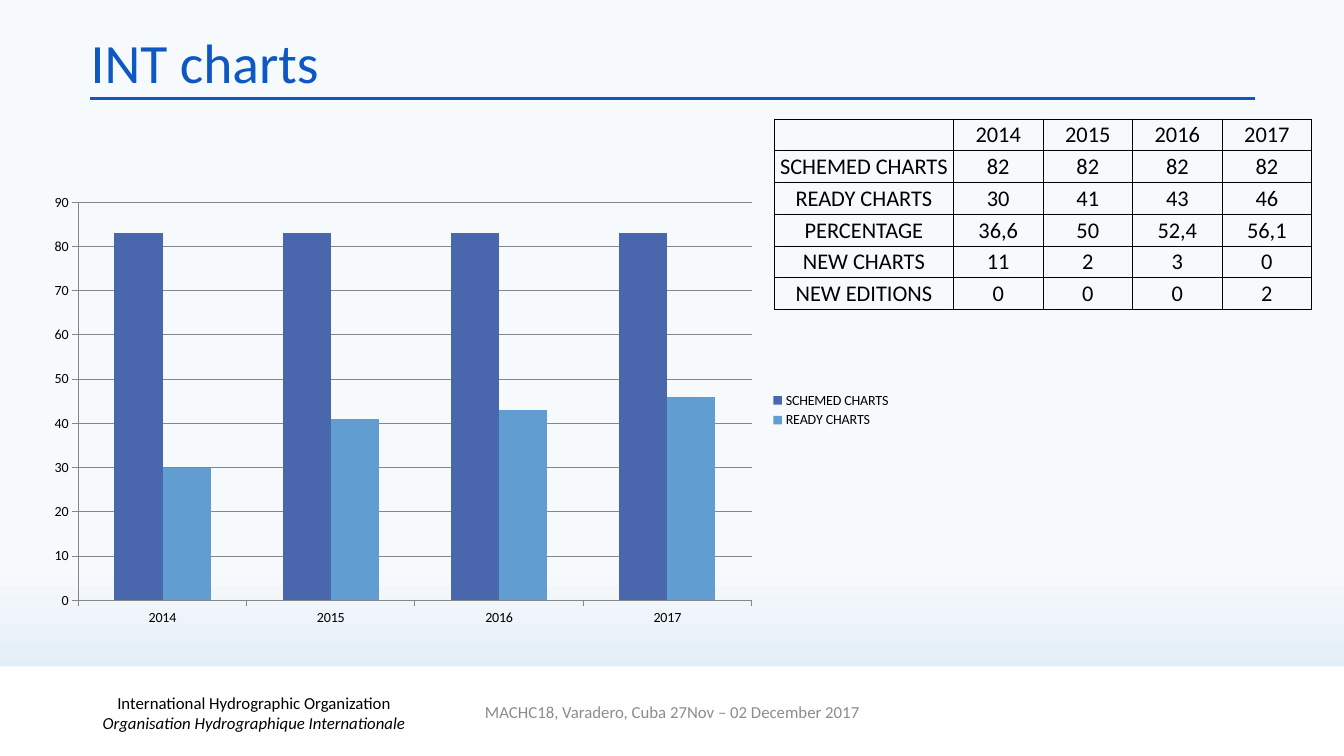
from lxml.etree import SubElement
from pptx import Presentation
from pptx.chart.data import CategoryChartData
from pptx.dml.color import RGBColor
from pptx.enum.chart import XL_CHART_TYPE, XL_LEGEND_POSITION, XL_TICK_MARK
from pptx.enum.shapes import MSO_CONNECTOR, MSO_SHAPE
from pptx.enum.text import MSO_ANCHOR, MSO_AUTO_SIZE, PP_ALIGN
from pptx.oxml.ns import qn
from pptx.util import Inches, Pt

FONT = "Calibri"
BLACK = RGBColor(0x00, 0x00, 0x00)
WHITE = RGBColor(0xFF, 0xFF, 0xFF)
BLUE = RGBColor(0x0E, 0x58, 0xC4)
GREY = RGBColor(0x8C, 0x8C, 0x8C)
GRID = RGBColor(0x86, 0x86, 0x86)
SKY_TOP = RGBColor(0xF7, 0xFA, 0xFD)
SKY_BOTTOM = RGBColor(0xD0, 0xE2, 0xF1)
SCHEMED = RGBColor(0x4A, 0x66, 0xAC)
READY = RGBColor(0x62, 0x9D, 0xD1)

YEARS = ["2014", "2015", "2016", "2017"]
SERIES = [
    ("SCHEMED CHARTS", [83, 83, 83, 83], SCHEMED),
    ("READY CHARTS", [30, 41, 43, 46], READY),
]
TABLE_ROWS = [
    [""] + YEARS,
    ["SCHEMED CHARTS", "82", "82", "82", "82"],
    ["READY CHARTS", "30", "41", "43", "46"],
    ["PERCENTAGE", "36,6", "50", "52,4", "56,1"],
    ["NEW CHARTS", "11", "2", "3", "0"],
    ["NEW EDITIONS", "0", "0", "0", "2"],
]


def style_font(font, size, color):
    font.name = FONT
    font.size = Pt(size)
    font.color.rgb = color


def set_background(slide):
    fill = slide.background.fill
    fill.gradient()
    fill.gradient_angle = 270
    stops = zip(fill.gradient_stops, [(0.75, SKY_TOP), (1.0, SKY_BOTTOM)])
    for stop, (position, color) in stops:
        stop.position = position
        stop.color.rgb = color


def add_heading(slide, text, left, top, width, height):
    # Title
    title = slide.shapes.title
    title.left, title.top = Inches(left), Inches(top)
    title.width, title.height = Inches(width), Inches(height)
    tf = title.text_frame
    tf.text = text
    tf.auto_size = MSO_AUTO_SIZE.NONE
    tf.vertical_anchor = MSO_ANCHOR.MIDDLE
    p = tf.paragraphs[0]
    p.alignment = PP_ALIGN.LEFT
    p.line_spacing = 0.9
    style_font(p.runs[0].font, 39.6, BLUE)

    # Rule under the title
    x, y = Inches(left + 0.09), Inches(top + height - 0.02)
    rule = slide.shapes.add_connector(
        MSO_CONNECTOR.STRAIGHT, x, y, x + Inches(11.56), y)
    rule.line.color.rgb = BLUE
    rule.line.width = Pt(2.25)
    SubElement(rule._element.spPr, qn("a:effectLst"))


def add_footer_text(slide, lines, color, left, top):
    box = slide.shapes.add_textbox(
        Inches(left), Inches(top), Inches(4.5), Inches(0.4))
    tf = box.text_frame
    tf.word_wrap = True
    tf.vertical_anchor = MSO_ANCHOR.MIDDLE
    p = tf.paragraphs[0]
    p.text = "\v".join(lines)
    p.alignment = PP_ALIGN.CENTER
    for i, r in enumerate(p.runs):
        style_font(r.font, 12, color)
        r.font.italic = i > 0


def add_footer(slide, left, top, width, height):
    band = slide.shapes.add_shape(
        MSO_SHAPE.RECTANGLE, Inches(left), Inches(top),
        Inches(width), Inches(height))
    band.shadow.inherit = False
    band.fill.solid()
    band.fill.fore_color.rgb = WHITE
    band.line.fill.background()
    add_footer_text(
        slide,
        ["International Hydrographic Organization",
         "Organisation Hydrographique Internationale"],
        BLACK, left + 0.27, top + 0.26)
    add_footer_text(
        slide, ["MACHC18, Varadero, Cuba 27Nov – 02 December 2017"],
        GREY, left + 4.42, top + 0.25)


def add_column_chart(slide, left, top, width, height):
    data = CategoryChartData()
    data.categories = YEARS
    for name, values, _ in SERIES:
        data.add_series(name, values)
    chart = slide.shapes.add_chart(
        XL_CHART_TYPE.COLUMN_CLUSTERED, Inches(left), Inches(top),
        Inches(width), Inches(height), data).chart
    style_font(chart.font, 10, BLACK)
    chart.has_title = False

    # Columns
    plot = chart.plots[0]
    plot.gap_width = 150
    plot.overlap = 0
    plot.vary_by_categories = False
    for series, (_, _, color) in zip(plot.series, SERIES):
        series.format.fill.solid()
        series.format.fill.fore_color.rgb = color

    # Axes and gridlines
    value_axis = chart.value_axis
    value_axis.minimum_scale, value_axis.maximum_scale = 0, 90
    value_axis.major_unit = 10
    value_axis.has_major_gridlines = True
    value_axis.major_gridlines.format.line.color.rgb = GRID
    for axis in (chart.category_axis, value_axis):
        axis.major_tick_mark = XL_TICK_MARK.OUTSIDE
        axis.format.line.color.rgb = GRID

    # Legend
    chart.has_legend = True
    chart.legend.position = XL_LEGEND_POSITION.RIGHT
    chart.legend.include_in_layout = False


def set_borders(cell):
    tc_pr = cell._tc.get_or_add_tcPr()
    for side in ("lnL", "lnR", "lnT", "lnB"):
        line = SubElement(tc_pr, qn(f"a:{side}"), w=str(Pt(0.5)))
        fill = SubElement(line, qn("a:solidFill"))
        SubElement(fill, qn("a:srgbClr"), val=str(BLACK))


def add_figures_table(slide, left, top, width, height):
    rows, cols = len(TABLE_ROWS), len(TABLE_ROWS[0])
    table = slide.shapes.add_table(
        rows, cols, Inches(left), Inches(top),
        Inches(width), Inches(height)).table
    table.first_row = table.horz_banding = False

    # The label column is twice as wide as a year column
    for i, column in enumerate(table.columns):
        column.width = Inches(width * (2 if i == 0 else 1) / (cols + 1))

    for i, values in enumerate(TABLE_ROWS):
        for j, value in enumerate(values):
            cell = table.cell(i, j)
            set_borders(cell)
            cell.fill.background()
            cell.vertical_anchor = MSO_ANCHOR.MIDDLE
            cell.margin_left = cell.margin_right = Inches(0.01)
            cell.margin_top, cell.margin_bottom = Inches(0.01), 0
            p = cell.text_frame.paragraphs[0]
            p.text = value
            p.alignment = PP_ALIGN.CENTER
            for r in p.runs:
                style_font(r.font, 16, BLACK)


def main():
    prs = Presentation()
    prs.slide_width, prs.slide_height = Inches(13.33), Inches(7.5)
    slide = prs.slides.add_slide(prs.slide_layouts[5])
    set_background(slide)
    add_footer(slide, 0, 6.61, 13.33, 0.89)
    add_heading(slide, "INT charts", 0.8, 0.3, 9.82, 0.7)
    add_column_chart(slide, 0.37, 1.84, 8.57, 4.46)
    add_figures_table(slide, 7.68, 1.18, 5.33, 1.89)
    prs.save("out.pptx")


if __name__ == "__main__":
    main()
